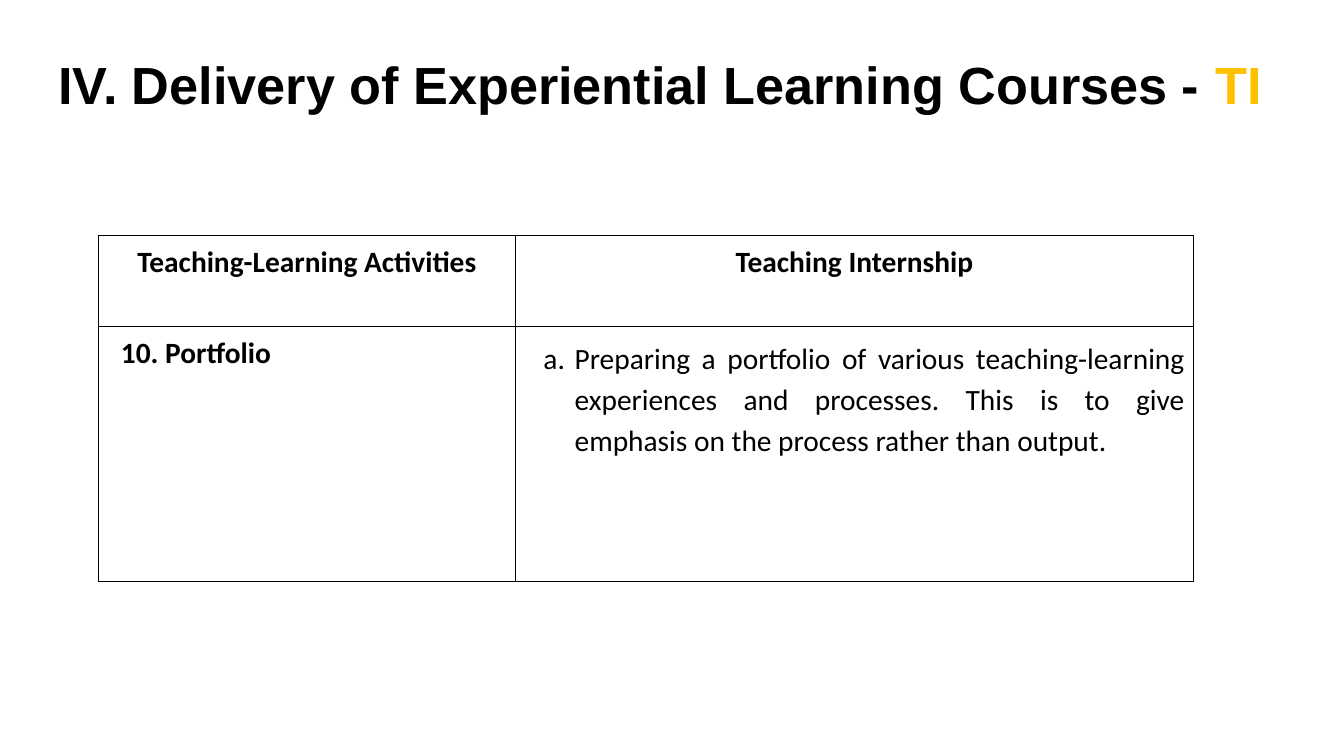
from lxml import etree
from pptx import Presentation
from pptx.dml.color import RGBColor
from pptx.enum.text import MSO_ANCHOR, PP_ALIGN
from pptx.oxml.ns import qn
from pptx.util import Pt

LEFT, CENTER, JUSTIFY = PP_ALIGN.LEFT, PP_ALIGN.CENTER, PP_ALIGN.JUSTIFY
MIDDLE, TOP = MSO_ANCHOR.MIDDLE, MSO_ANCHOR.TOP

EMU_PER_PX = 9144  # 100 px to the inch
COLORS = {"text": "000000", "accent": "FFC000", "border": "000000"}
MARGINS = ("margin_left", "margin_top", "margin_right", "margin_bottom")
THIN, REGULAR = 0.75, 1

TITLE_BOX = (45, 38, 1242, 89)
TABLE_BOX = (98, 234, 1086, 343)
COLUMN_WIDTHS = (413, 673)
ROW_HEIGHTS = (90, 253)


def px(length):
    return length * EMU_PER_PX


def set_attributes(target, values):
    for name, value in values.items():
        setattr(target, name, value)


def add_run(paragraph, text, color="text", **font_values):
    run = paragraph.add_run()
    run.text = text
    set_attributes(run.font, font_values)
    run.font.color.rgb = RGBColor.from_string(COLORS[color])


def set_indent(paragraph, left, first_line=0):
    properties = paragraph._p.get_or_add_pPr()
    properties.set("marL", str(px(left)))
    properties.set("indent", str(px(first_line)))


def add_letter_numbering(paragraph):
    properties = paragraph._p.get_or_add_pPr()
    bullet_color = etree.SubElement(properties, qn("a:buClr"))
    etree.SubElement(bullet_color, qn("a:srgbClr"), val=COLORS["text"])
    etree.SubElement(properties, qn("a:buAutoNum"), type="alphaLcPeriod")


def set_borders(cell, top, bottom):
    """Draw the four sides; top and bottom are widths in points."""
    properties = cell._tc.get_or_add_tcPr()
    widths = {"lnL": REGULAR, "lnR": REGULAR, "lnT": top, "lnB": bottom}
    for side, width in widths.items():
        line = etree.SubElement(properties, qn(f"a:{side}"), w=str(Pt(width)))
        fill = etree.SubElement(line, qn("a:solidFill"))
        etree.SubElement(fill, qn("a:srgbClr"), val=COLORS["border"])


def build_title(slide, box):
    title = slide.shapes.title
    set_attributes(title, dict(zip(("left", "top", "width", "height"), map(px, box))))
    frame = title.text_frame
    set_attributes(frame, dict.fromkeys(MARGINS, px(13)))
    set_attributes(frame, {"word_wrap": True, "vertical_anchor": MIDDLE})
    paragraph = frame.paragraphs[0]
    paragraph.alignment = LEFT
    font_values = {"name": "Arial", "size": Pt(37.3), "bold": True}
    add_run(paragraph, "IV. Delivery of Experiential Learning Courses - ", **font_values)
    add_run(paragraph, "TI", "accent", **font_values)


def fill_cell(cell, text, alignment, bold=True):
    set_attributes(cell, dict.fromkeys(MARGINS, px(9)))
    cell.vertical_anchor = TOP
    cell.fill.background()
    paragraph = cell.text_frame.paragraphs[0]
    paragraph.alignment = alignment
    add_run(paragraph, text, name="Calibri", size=Pt(21), bold=bold)
    return paragraph


def build_activity_table(slide, box):
    table = slide.shapes.add_table(len(ROW_HEIGHTS), len(COLUMN_WIDTHS), *map(px, box)).table
    set_attributes(table, {"first_row": False, "horz_banding": False})
    for column, width in zip(table.columns, COLUMN_WIDTHS):
        column.width = px(width)
    for row, height, top, bottom in zip(table.rows, ROW_HEIGHTS, (REGULAR, THIN), (THIN, REGULAR)):
        row.height = px(height)
        for cell in row.cells:
            set_borders(cell, top, bottom)

    for column, heading in enumerate(("Teaching-Learning Activities", "Teaching Internship")):
        fill_cell(table.cell(0, column), heading, CENTER)

    activity = fill_cell(table.cell(1, 0), "10. Portfolio", JUSTIFY)
    set_indent(activity, 13)
    description = fill_cell(
        table.cell(1, 1),
        "Preparing a portfolio of various teaching-learning experiences and processes. "
        "This is to give emphasis on the process rather than output.",
        JUSTIFY, bold=False)
    description.line_spacing = 1.15
    set_indent(description, 50, -31)
    add_letter_numbering(description)


def main():
    presentation = Presentation()
    set_attributes(presentation, {"slide_width": px(1333), "slide_height": px(750)})
    title_only = presentation.slide_layouts.get_by_name("Title Only")
    slide = presentation.slides.add_slide(title_only)
    build_title(slide, TITLE_BOX)
    build_activity_table(slide, TABLE_BOX)
    presentation.save("out.pptx")


if __name__ == "__main__":
    main()
